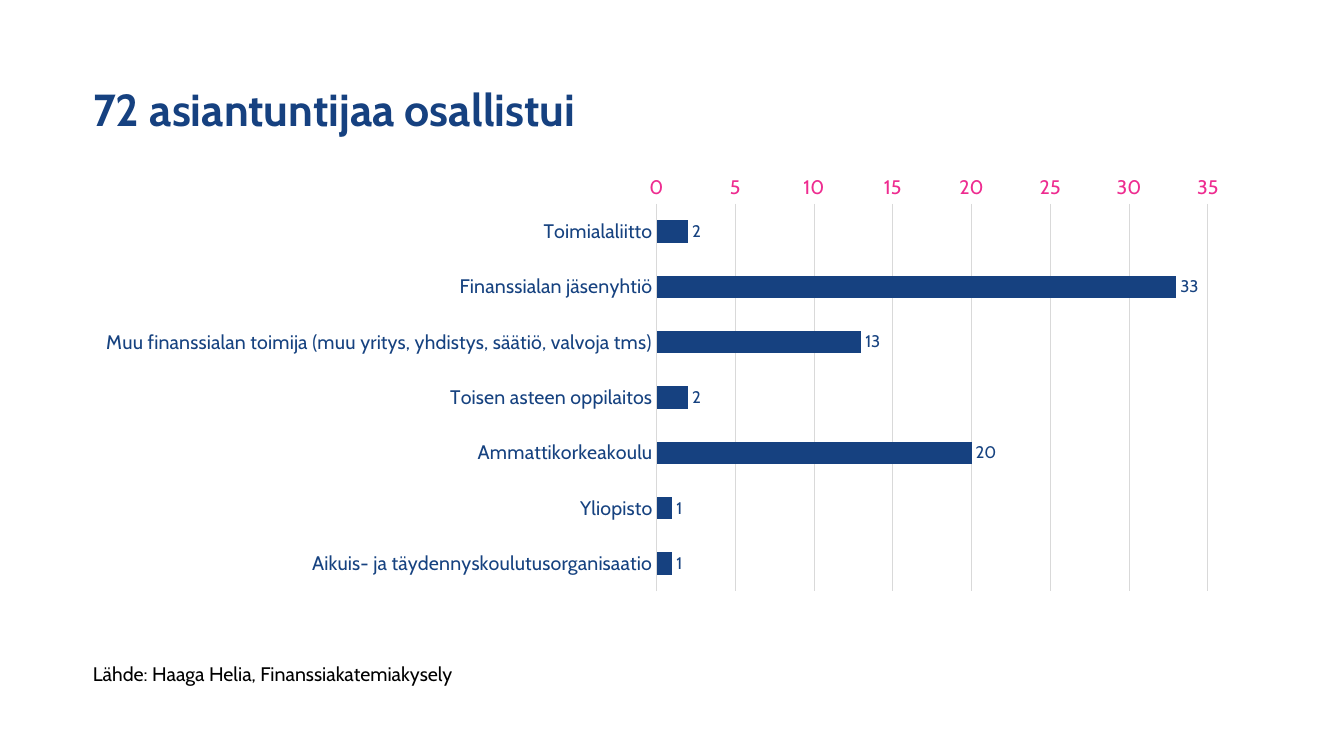
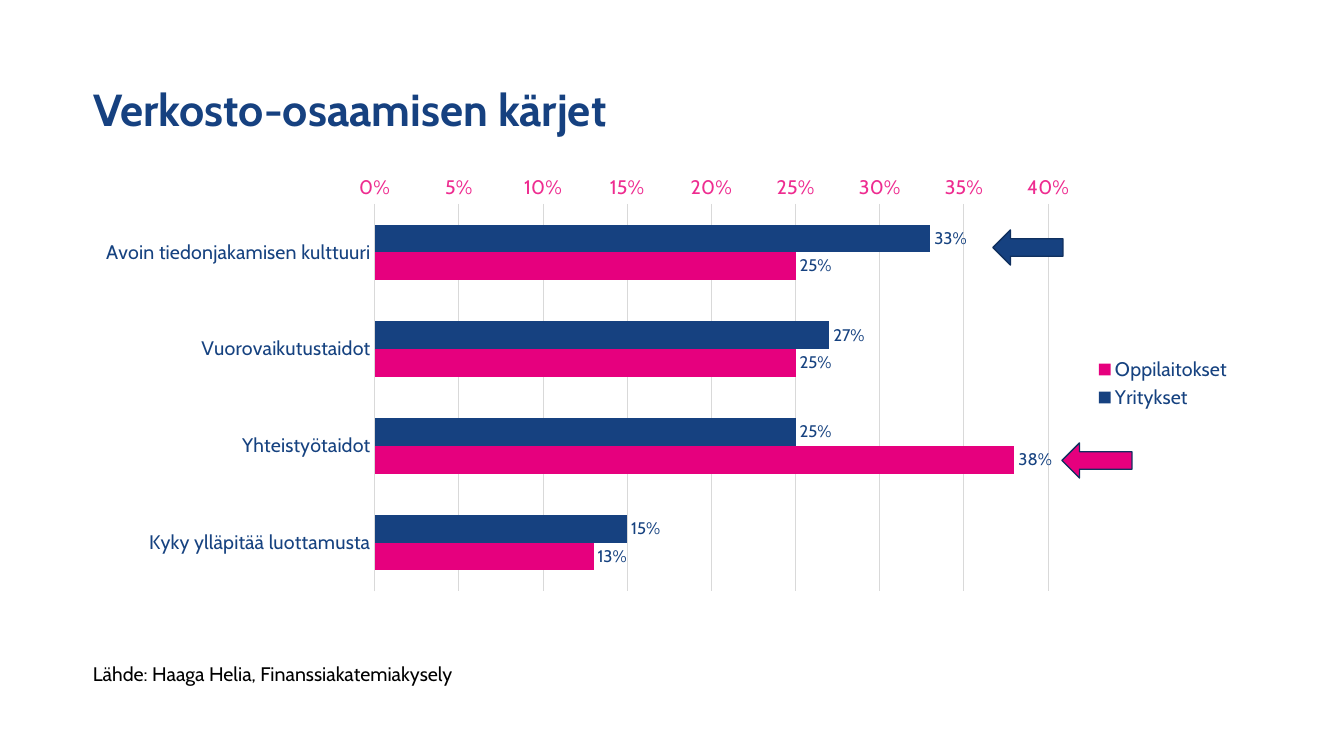
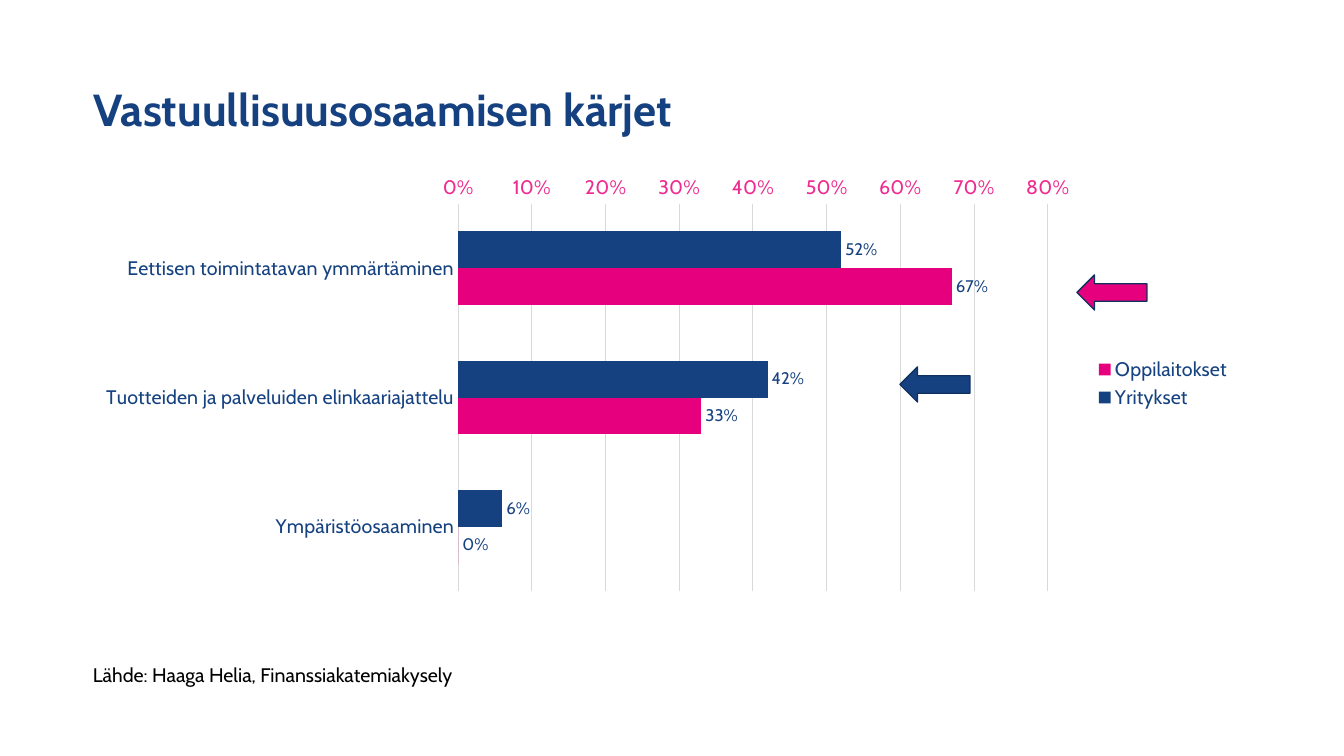
from pptx import Presentation
from pptx.chart.data import CategoryChartData
from pptx.dml.color import RGBColor
from pptx.enum.chart import XL_CHART_TYPE, XL_LABEL_POSITION, XL_LEGEND_POSITION, XL_TICK_MARK
from pptx.enum.shapes import MSO_SHAPE
from pptx.enum.text import MSO_ANCHOR, MSO_AUTO_SIZE, PP_ALIGN
from pptx.util import Pt

BAR_CLUSTERED = XL_CHART_TYPE.BAR_CLUSTERED
OUTSIDE_END = XL_LABEL_POSITION.OUTSIDE_END
LEGEND_RIGHT = XL_LEGEND_POSITION.RIGHT
NO_TICK = XL_TICK_MARK.NONE
LEFT_ARROW = MSO_SHAPE.LEFT_ARROW
MIDDLE = MSO_ANCHOR.MIDDLE
LEFT = PP_ALIGN.LEFT
NO_AUTOFIT = MSO_AUTO_SIZE.NONE
GROW = MSO_AUTO_SIZE.SHAPE_TO_FIT_TEXT

BLUE = RGBColor(0x16, 0x41, 0x80)
CHART_TEXT = RGBColor(0x16, 0x42, 0x80)
PINK = RGBColor(0xE6, 0x00, 0x7E)
AXIS_PINK = RGBColor(0xEE, 0x2C, 0x90)
GRID = RGBColor(0xD9, 0xD9, 0xD9)
OUTLINE = RGBColor(0x10, 0x30, 0x5F)
BLACK = RGBColor(0x00, 0x00, 0x00)

FONT = "Cabin"
TITLE_ONLY = 5
SLIDE_WIDTH, SLIDE_HEIGHT = 1344, 756
EMU_PER_PX = 12192000 / SLIDE_WIDTH
MARGIN = 83
CONTENT_WIDTH = 1159
ARROW_WIDTH, ARROW_HEIGHT = 70, 35
SOURCE = "Lähde: Haaga Helia, Finanssiakatemiakysely"
SERIES_COLORS = (BLUE, PINK)


def px(length):
    return round(length * EMU_PER_PX)


class Deck:
    def __init__(self):
        self.presentation = Presentation()
        self.presentation.slide_width = px(SLIDE_WIDTH)
        self.presentation.slide_height = px(SLIDE_HEIGHT)
        self.slide = None

    def style(self, font, size, color, bold=False):
        font.name = FONT
        font.size = Pt(size)
        font.bold = bold
        font.color.rgb = color

    def add_run(self, paragraph, text, size, color, bold=False):
        run = paragraph.add_run()
        run.text = text
        self.style(run.font, size, color, bold)

    def add_slide(self, title, source_top=657):
        layout = self.presentation.slide_layouts[TITLE_ONLY]
        self.slide = self.presentation.slides.add_slide(layout)
        self.add_title(title)
        self.add_source(source_top)

    def add_title(self, text):
        shape = self.slide.shapes.title
        shape.left, shape.top = px(MARGIN), px(39)
        shape.width, shape.height = px(CONTENT_WIDTH), px(146)
        frame = shape.text_frame
        frame.auto_size = NO_AUTOFIT
        frame.vertical_anchor = MIDDLE
        paragraph = frame.paragraphs[0]
        paragraph.alignment = LEFT
        paragraph.line_spacing = 0.9
        self.add_run(paragraph, text, 32, BLUE, bold=True)

    def add_source(self, top):
        shape = self.slide.shapes.add_textbox(px(MARGIN), px(top), px(439), px(34))
        frame = shape.text_frame
        frame.word_wrap = False
        frame.auto_size = GROW
        self.add_run(frame.paragraphs[0], SOURCE, 14, BLACK)

    def add_bar_chart(self, categories, series, maximum, step, number_format="0%"):
        data = CategoryChartData(number_format=number_format)
        data.categories = categories
        for name, values in series.items():
            data.add_series(name, values)
        chart = self.slide.shapes.add_chart(
            BAR_CLUSTERED, px(MARGIN), px(167), px(CONTENT_WIDTH), px(433), data
        ).chart
        self.style(chart.font, 14, CHART_TEXT)
        chart.has_title = False
        chart.has_legend = len(series) > 1
        if chart.has_legend:
            chart.legend.position = LEGEND_RIGHT
            chart.legend.include_in_layout = False
            self.style(chart.legend.font, 14, CHART_TEXT)
        self.style_axes(chart, maximum, step, number_format)
        self.style_bars(chart.plots[0], number_format)

    def style_axes(self, chart, maximum, step, number_format):
        category_axis, value_axis = chart.category_axis, chart.value_axis
        for axis, color in ((category_axis, CHART_TEXT), (value_axis, AXIS_PINK)):
            axis.major_tick_mark = axis.minor_tick_mark = NO_TICK
            self.style(axis.tick_labels.font, 14, color)
        category_axis.reverse_order = True
        value_axis.minimum_scale = 0
        value_axis.maximum_scale = maximum
        value_axis.major_unit = step
        value_axis.has_major_gridlines = True
        value_axis.tick_labels.number_format = number_format
        value_axis.tick_labels.number_format_is_linked = False
        value_axis.format.line.fill.background()
        for line in (category_axis.format.line, value_axis.major_gridlines.format.line):
            line.color.rgb = GRID
            line.width = Pt(0.75)

    def style_bars(self, plot, number_format):
        plot.gap_width = 150
        plot.overlap = 0
        plot.vary_by_categories = False
        for series, color in zip(plot.series, SERIES_COLORS):
            series.invert_if_negative = False
            series.format.fill.solid()
            series.format.fill.fore_color.rgb = color
            labels = series.data_labels
            labels.show_value = True
            labels.position = OUTSIDE_END
            labels.number_format = number_format
            labels.number_format_is_linked = False
            self.style(labels.font, 12, CHART_TEXT)

    def add_arrow(self, left, top, color):
        shape = self.slide.shapes.add_shape(
            LEFT_ARROW, px(left), px(top), px(ARROW_WIDTH), px(ARROW_HEIGHT)
        )
        shape.shadow.inherit = False
        shape.fill.solid()
        shape.fill.fore_color.rgb = color
        shape.line.color.rgb = OUTLINE
        shape.line.width = Pt(1)

    def save(self):
        self.presentation.save("out.pptx")


def main():
    deck = Deck()

    deck.add_slide("72 asiantuntijaa osallistui")
    participants = {
        "Toimialaliitto": 2,
        "Finanssialan jäsenyhtiö": 33,
        "Muu finanssialan toimija (muu yritys, yhdistys, säätiö, valvoja tms)": 13,
        "Toisen asteen oppilaitos": 2,
        "Ammattikorkeakoulu": 20,
        "Yliopisto": 1,
        "Aikuis- ja täydennyskoulutusorganisaatio": 1,
    }
    deck.add_bar_chart(
        list(participants), {"Series 1": list(participants.values())}, 35, 5, "#,##0"
    )

    deck.add_slide("Verkosto-osaamisen kärjet")
    deck.add_bar_chart(
        [
            "Avoin tiedonjakamisen kulttuuri",
            "Vuorovaikutustaidot",
            "Yhteistyötaidot",
            "Kyky ylläpitää luottamusta",
        ],
        {
            "Yritykset": [0.33, 0.27, 0.25, 0.15],
            "Oppilaitokset": [0.25, 0.25, 0.38, 0.13],
        },
        0.4,
        0.05,
    )
    deck.add_arrow(993, 230, BLUE)
    deck.add_arrow(1062, 443, PINK)

    deck.add_slide("Vastuullisuusosaamisen kärjet", source_top=658)
    deck.add_bar_chart(
        [
            "Eettisen toimintatavan ymmärtäminen",
            "Tuotteiden ja palveluiden elinkaariajattelu",
            "Ympäristöosaaminen",
        ],
        {"Yritykset": [0.52, 0.42, 0.06], "Oppilaitokset": [0.67, 0.33, 0]},
        0.8,
        0.1,
    )
    deck.add_arrow(900, 367, BLUE)
    deck.add_arrow(1077, 275, PINK)

    deck.save()


if __name__ == "__main__":
    main()
